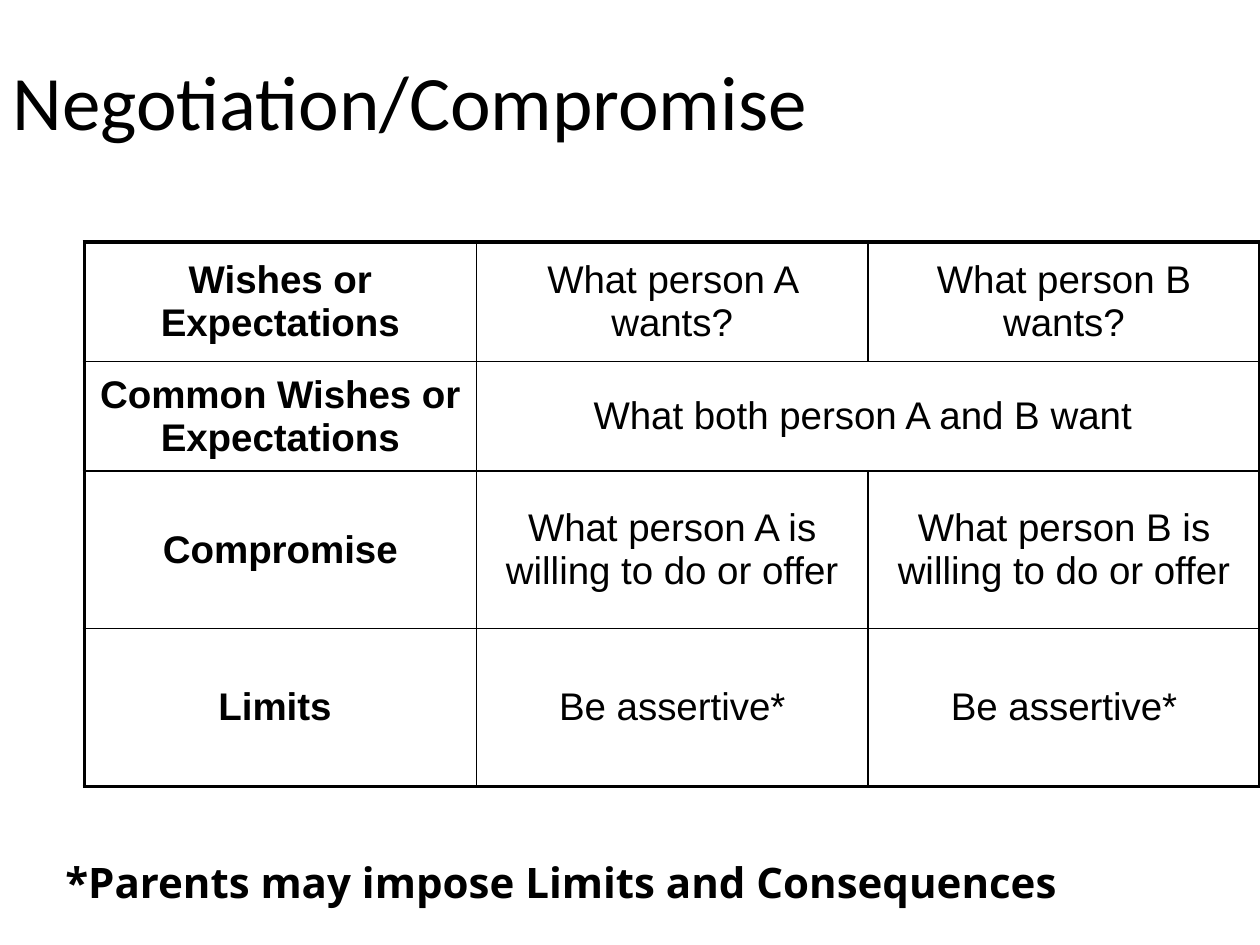
from typing import NamedTuple

from lxml import etree
from pptx import Presentation
from pptx.dml.color import RGBColor
from pptx.enum.text import MSO_ANCHOR, PP_ALIGN
from pptx.oxml.ns import qn
from pptx.util import Inches, Pt

MIDDLE, TOP = MSO_ANCHOR.MIDDLE, MSO_ANCHOR.TOP
CENTER = PP_ALIGN.CENTER
BLACK = "000000"
OUTER, INNER = 2.25, 1
COLS = 3
COL_WIDTH = 3.11


class Style(NamedTuple):
    font: str
    size: float
    bold: bool = False


class TextBox(NamedTuple):
    text: str
    left: float
    top: float
    width: float
    height: float
    style: Style
    anchor: MSO_ANCHOR = TOP
    line_spacing: float = 1.0


class Row(NamedTuple):
    label: str
    answers: tuple[str, ...]
    height: float


BOXES = [
    TextBox("Negotiation/Compromise", 0, 0.13, 8.25, 1.42, Style("Calibri", 44), MIDDLE, 0.9),
    TextBox("*Parents may impose Limits and Consequences", 0.42, 6.75, 8.74, 0.5,
            Style("Noto Sans", 24, True)),
]
ROWS = [
    Row("Wishes or Expectations", ("What person A wants?", "What person B wants?"), 0.95),
    Row("Common Wishes or Expectations", ("What both person A and B want ",), 0.87),
    Row("Compromise", ("What person A is willing to do or offer",
                       "What person B is willing to do or offer"), 1.25),
    Row("Limits ", ("Be assertive*", "Be assertive*"), 1.25),
]


def color(value: str) -> RGBColor:
    """Turn a hex string into a colour."""
    return RGBColor.from_string(value)


def add_run(p, text: str, style: Style) -> None:
    """Add one styled run to a paragraph."""
    r = p.add_run()
    r.text = text
    r.font.name, r.font.size, r.font.bold = style.font, Pt(style.size), style.bold
    r.font.color.rgb = color(BLACK)


def add_text_box(s, box: TextBox) -> None:
    """Draw a wrapped text box."""
    sp = s.shapes.add_textbox(*map(Inches, (box.left, box.top, box.width, box.height)))
    tf = sp.text_frame
    tf.word_wrap = True
    tf.vertical_anchor = box.anchor
    p = tf.paragraphs[0]
    p.line_spacing = box.line_spacing
    add_run(p, box.text, box.style)


def set_borders(cell, widths: dict[str, float]) -> None:
    """Give a cell solid borders of the given widths."""
    tc_pr = cell._tc.get_or_add_tcPr()
    for side, width in widths.items():
        ln = etree.SubElement(tc_pr, qn(f"a:ln{side}"), w=str(Pt(width)))
        fill = etree.SubElement(ln, qn("a:solidFill"))
        etree.SubElement(fill, qn("a:srgbClr"), val=BLACK)


def fill_cell(cell, text: str, bold: bool) -> None:
    """Write centred text in a cell."""
    cell.vertical_anchor = MIDDLE
    p = cell.text_frame.paragraphs[0]
    p.alignment = CENTER
    add_run(p, text, Style("Arial", 22, bold))


def add_grid(s, left: float, top: float, rows: list[Row]) -> None:
    """Draw the table with a heavy frame and thin inner lines."""
    height = sum(row.height for row in rows)
    table = s.shapes.add_table(len(rows), COLS, Inches(left), Inches(top),
                               Inches(COL_WIDTH * COLS), Inches(height)).table
    table.first_row = table.horz_banding = False
    for column in table.columns:
        column.width = Inches(COL_WIDTH)
    for i, row in enumerate(rows):
        table.rows[i].height = Inches(row.height)
        texts = (row.label, *row.answers)
        if len(texts) < COLS:
            table.cell(i, len(texts) - 1).merge(table.cell(i, COLS - 1))
        for j in range(COLS):
            cell = table.cell(i, j)
            last = j == COLS - 1 or cell.is_merge_origin
            set_borders(cell, {
                "L": OUTER if j == 0 else INNER,
                "R": OUTER if last else INNER,
                "T": OUTER if i == 0 else INNER,
                "B": OUTER if i == len(rows) - 1 else INNER,
            })
            cell.fill.background()
            if not cell.is_spanned:
                fill_cell(cell, texts[j], j == 0)


def main() -> None:
    """Build and save the slide."""
    prs = Presentation()
    prs.slide_width, prs.slide_height = Inches(10), Inches(7.5)
    s = prs.slides.add_slide(prs.slide_layouts[6])
    add_grid(s, 0.67, 1.92, ROWS)
    for box in BOXES:
        add_text_box(s, box)
    prs.save("out.pptx")


if __name__ == "__main__":
    main()
